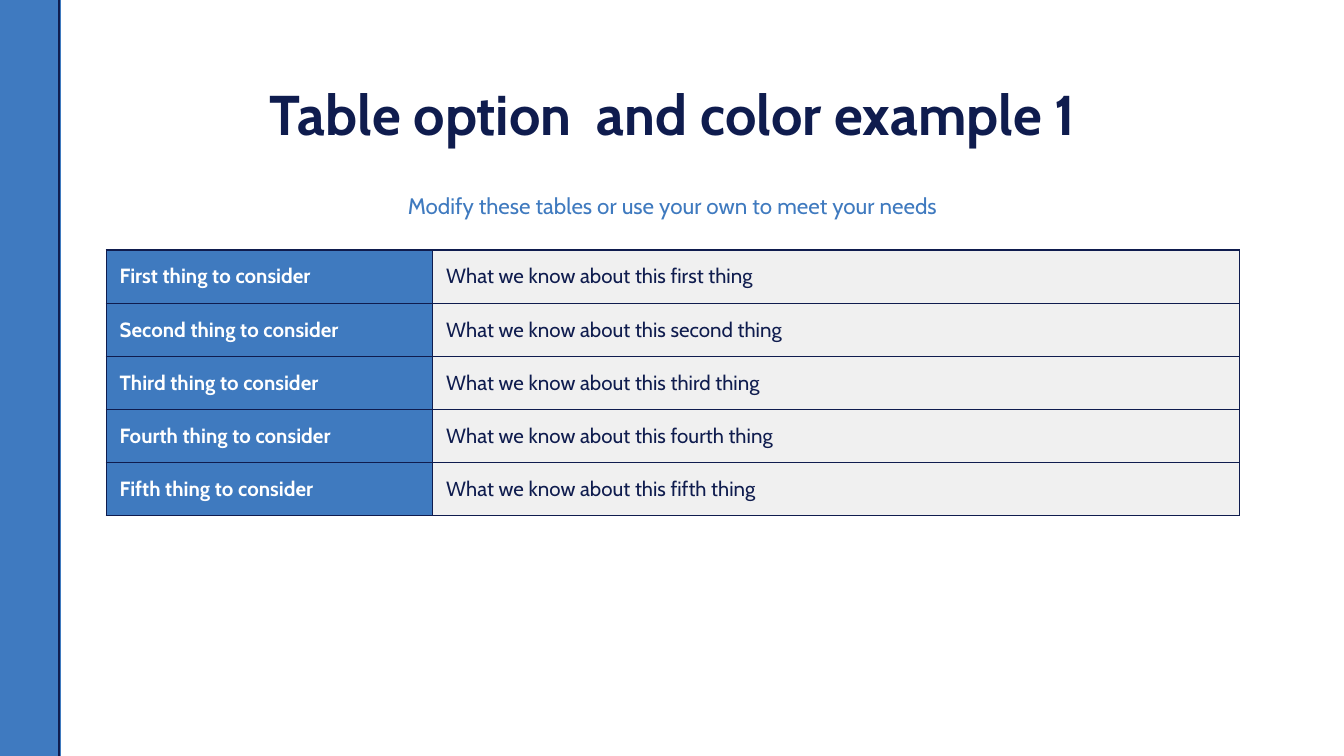
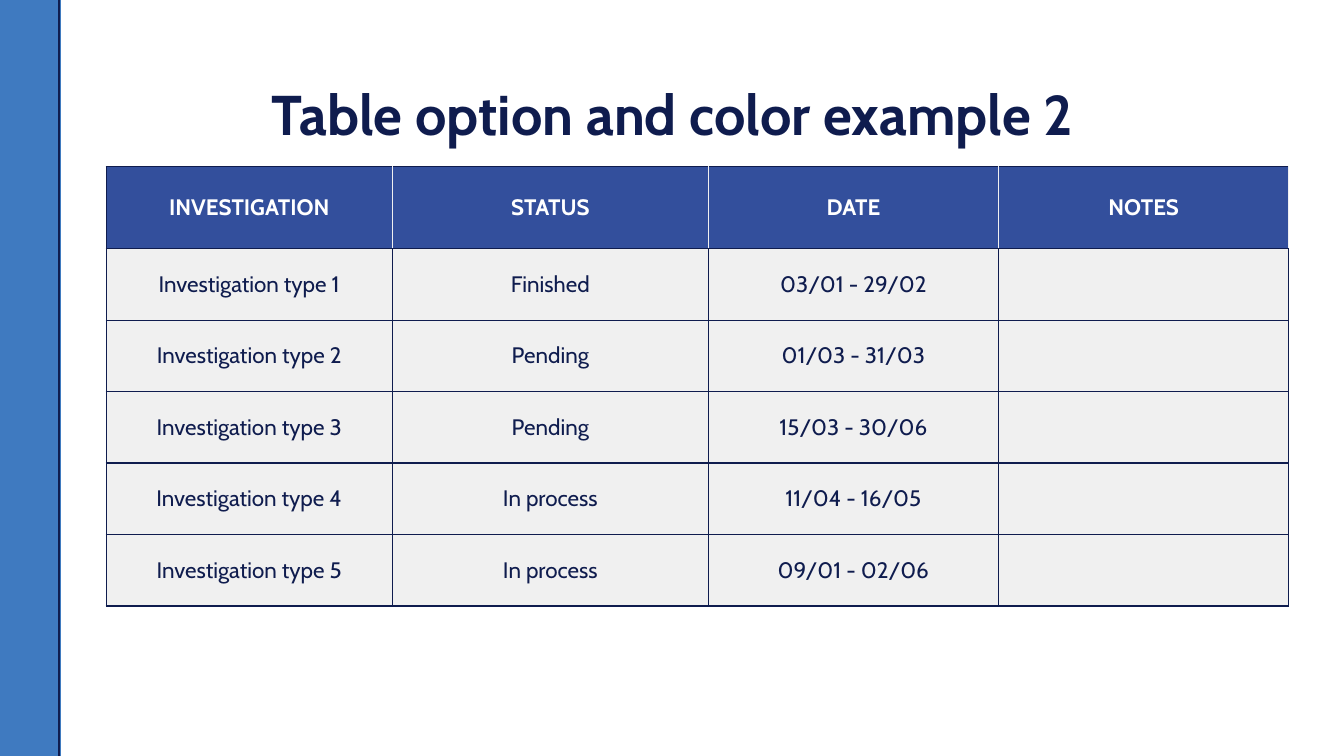
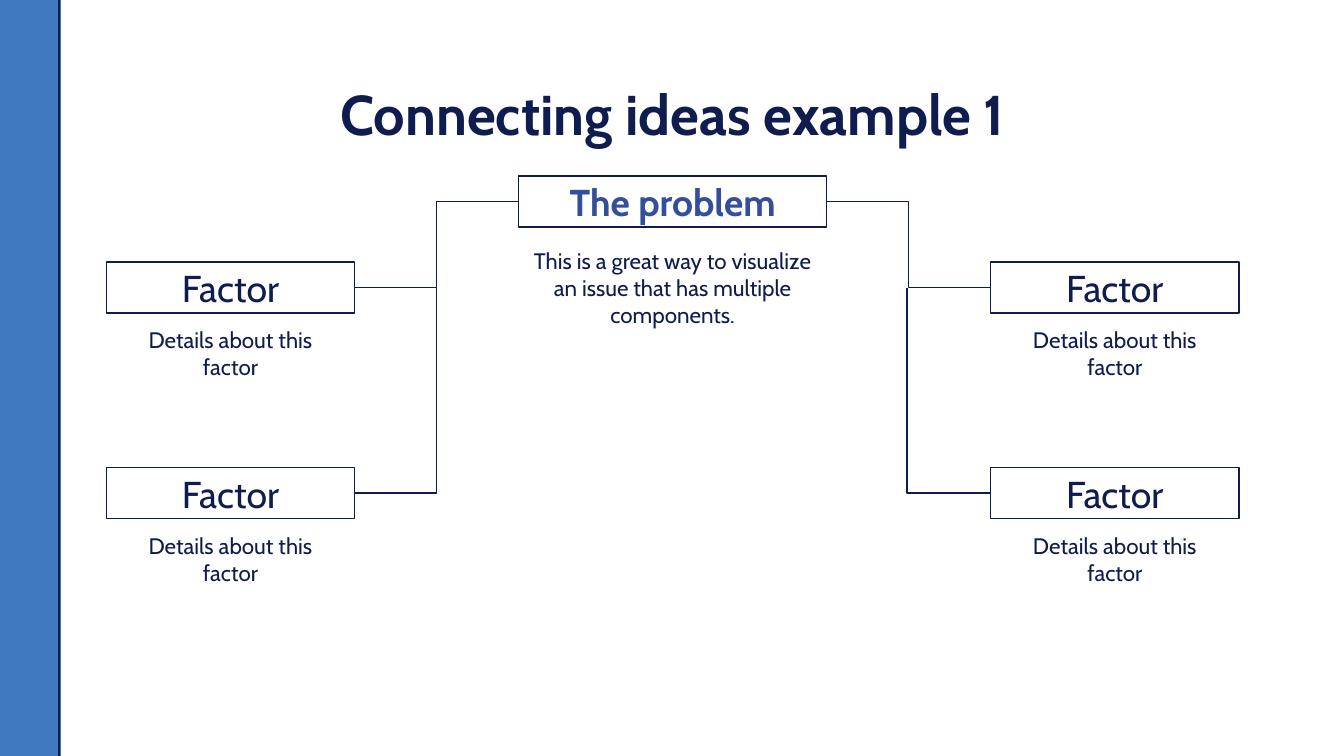
from dataclasses import dataclass

from lxml import etree
from pptx import Presentation
from pptx.dml.color import RGBColor
from pptx.enum.shapes import MSO_CONNECTOR, MSO_SHAPE
from pptx.enum.text import MSO_ANCHOR, PP_ALIGN
from pptx.oxml.ns import qn
from pptx.util import Inches, Pt

RECTANGLE = MSO_SHAPE.RECTANGLE
STRAIGHT, ELBOW = MSO_CONNECTOR.STRAIGHT, MSO_CONNECTOR.ELBOW
LEFT, CENTER = PP_ALIGN.LEFT, PP_ALIGN.CENTER
TOP, MIDDLE = MSO_ANCHOR.TOP, MSO_ANCHOR.MIDDLE
LEFT_SITE, RIGHT_SITE = 1, 3


@dataclass(frozen=True)
class Theme:
    font: str = "Cabin"
    navy: str = "0F1C4E"
    blue: str = "3F7ABF"
    band: str = "3F7AC0"
    royal: str = "334F9C"
    gray: str = "F0F0F0"
    white: str = "FFFFFF"
    title_size: float = 30
    label_size: float = 20
    body_size: float = 12
    row_size: float = 11
    thin: float = 0.75
    inset: float = 0.1


THEME = Theme()
SLIDE_WIDTH = 10
SLIDE_HEIGHT = SLIDE_WIDTH * 9 / 16
MARGIN, CONTENT_WIDTH = 0.79, 8.43

CONSIDER = {
    "title": "Table option  and color example 1",
    "subtitle": "Modify these tables or use your own to meet your needs",
    "ordinals": ["First", "Second", "Third", "Fourth", "Fifth"],
    "columns": [2.43, 6],
    "height": 1.98,
}

INVESTIGATIONS = {
    "title": "Table option and color example 2",
    "header": ["INVESTIGATION", "STATUS", "DATE", "NOTES"],
    "rows": [
        ("Finished", "03/01 - 29/02"),
        ("Pending", "01/03 - 31/03"),
        ("Pending", "15/03 - 30/06"),
        ("In process", "11/04 - 16/05"),
        ("In process", "09/01 - 02/06"),
    ],
    "columns": [2.13, 2.35, 2.16, 2.16],
    "header_height": 0.61,
    "height": 3.27,
}

IDEAS = {
    "title": "Connecting ideas example 1",
    "problem": "The problem",
    "summary": "This is a great way to visualize an issue that has multiple components.",
    "factor": "Factor",
    "details": "Details about this factor",
}
LABEL_HEIGHT = 0.38
PROBLEM_LEFT, PROBLEM_TOP, PROBLEM_WIDTH = 3.86, 1.31, 2.29
FACTOR_WIDTH = 1.85
FACTOR_TOPS = [1.95, 3.48]
FACTOR_SIDES = [
    {"left": MARGIN, "spine": 3.25, "factor_site": RIGHT_SITE, "problem_site": LEFT_SITE},
    {
        "left": MARGIN + CONTENT_WIDTH - FACTOR_WIDTH,
        "spine": 6.75,
        "factor_site": LEFT_SITE,
        "problem_site": RIGHT_SITE,
    },
]


def rgb(color):
    return RGBColor.from_string(color)


def inches(*lengths):
    return [Inches(length) for length in lengths]


def write(frame, text, size, color, bold=False, align=CENTER):
    para = frame.paragraphs[0]
    para.alignment = align
    if not text:
        para.font.size = Pt(size)
        return
    span = para.add_run()
    span.text = text
    span.font.name = THEME.font
    span.font.size = Pt(size)
    span.font.bold = bold
    span.font.color.rgb = rgb(color)


def fill_frame(frame, anchor, *text_style):
    frame.word_wrap = True
    frame.vertical_anchor = anchor
    frame.margin_left = frame.margin_right = Inches(THEME.inset)
    frame.margin_top = frame.margin_bottom = Inches(THEME.inset)
    write(frame, *text_style)


def add_text(page, area, text, size=THEME.body_size, color=THEME.navy, bold=False):
    box = page.shapes.add_textbox(*inches(*area))
    fill_frame(box.text_frame, TOP, text, size, color, bold)


def add_label(page, area, text, color=THEME.navy, bold=False):
    box = page.shapes.add_shape(RECTANGLE, *inches(*area))
    box.shadow.inherit = False
    box.fill.background()
    box.line.color.rgb = rgb(THEME.navy)
    box.line.width = Pt(THEME.thin)
    fill_frame(box.text_frame, MIDDLE, text, THEME.label_size, color, bold)
    return box


def add_line(page, kind, start, end, color=THEME.navy, width=THEME.thin):
    line = page.shapes.add_connector(kind, *inches(*start, *end))
    line.line.color.rgb = rgb(color)
    line.line.width = Pt(width)
    etree.SubElement(line._element.spPr, qn("a:effectLst"))
    return line


def add_page(deck, title):
    page = deck.slides.add_slide(deck.slide_layouts[6])
    page.background.fill.solid()
    page.background.fill.fore_color.rgb = rgb(THEME.white)
    band = page.shapes.add_shape(RECTANGLE, *inches(-0.01, -0.01, 0.45, 5.64))
    band.shadow.inherit = False
    band.fill.solid()
    band.fill.fore_color.rgb = rgb(THEME.band)
    band.line.fill.background()
    for x, color, width in [(0.45, THEME.blue, THEME.thin), (0.44, THEME.navy, 1)]:
        add_line(page, STRAIGHT, (x, 5.63), (x, -0.01), color, width)
    add_text(page, (MARGIN, 0.49, CONTENT_WIDTH, 0.63), title, THEME.title_size, bold=True)
    return page


def set_borders(cell, left=THEME.navy, right=THEME.navy):
    properties = cell._tc.get_or_add_tcPr()
    sides = [("L", left), ("R", right), ("T", THEME.navy), ("B", THEME.navy)]
    for position, (side, color) in enumerate(sides):
        border = etree.Element(qn(f"a:ln{side}"), w=str(Pt(THEME.thin)))
        fill = etree.SubElement(border, qn("a:solidFill"))
        etree.SubElement(fill, qn("a:srgbClr"), val=color)
        properties.insert(position, border)


def add_grid(page, top, columns, heights, has_header):
    area = inches(MARGIN, top, sum(columns), sum(heights))
    table = page.shapes.add_table(len(heights), len(columns), *area).table
    table.first_row = has_header
    table.horz_banding = False
    for column, width in zip(table.columns, columns):
        column.width = Inches(width)
    for row, height in zip(table.rows, heights):
        row.height = Inches(height)
    return table


def fill_cell(cell, text, fill, size, color, bold, align, inset, **borders):
    cell.fill.solid()
    cell.fill.fore_color.rgb = rgb(fill)
    cell.vertical_anchor = MIDDLE
    cell.margin_left = cell.margin_right = Inches(THEME.inset)
    cell.margin_top = cell.margin_bottom = Inches(inset)
    write(cell.text_frame, text, size, color, bold, align)
    set_borders(cell, **borders)


def build_consider(deck):
    page = add_page(deck, CONSIDER["title"])
    subtitle_area = (MARGIN, 1.33, CONTENT_WIDTH, 0.38)
    add_text(page, subtitle_area, CONSIDER["subtitle"], color=THEME.blue)
    ordinals = CONSIDER["ordinals"]
    heights = [CONSIDER["height"] / len(ordinals)] * len(ordinals)
    table = add_grid(page, 1.86, CONSIDER["columns"], heights, False)
    for row, ordinal in enumerate(ordinals):
        cells = [
            (f"{ordinal} thing to consider", THEME.blue, THEME.white, True),
            (f"What we know about this {ordinal.lower()} thing", THEME.gray, THEME.navy, False),
        ]
        for column, (text, fill, color, bold) in enumerate(cells):
            cell = table.cell(row, column)
            fill_cell(cell, text, fill, THEME.row_size, color, bold, LEFT, 0)


def build_investigations(deck):
    page = add_page(deck, INVESTIGATIONS["title"])
    rows = [INVESTIGATIONS["header"]]
    for number, (status, dates) in enumerate(INVESTIGATIONS["rows"], 1):
        rows.append([f"Investigation type {number}", status, dates, ""])
    header_height = INVESTIGATIONS["header_height"]
    body_count = len(rows) - 1
    row_height = (INVESTIGATIONS["height"] - header_height) / body_count
    heights = [header_height] + [row_height] * body_count
    table = add_grid(page, 1.24, INVESTIGATIONS["columns"], heights, True)
    for row, texts in enumerate(rows):
        is_header = row == 0
        fill, color = (THEME.royal, THEME.white) if is_header else (THEME.gray, THEME.navy)
        for column, text in enumerate(texts):
            borders = {}
            if is_header:
                borders = {"left": THEME.gray if column else THEME.navy, "right": THEME.gray}
            fill_cell(table.cell(row, column), text, fill, THEME.body_size, color,
                      is_header, CENTER, THEME.inset, **borders)


def build_ideas(deck):
    page = add_page(deck, IDEAS["title"])
    problem_area = (PROBLEM_LEFT, PROBLEM_TOP, PROBLEM_WIDTH, LABEL_HEIGHT)
    problem = add_label(page, problem_area, IDEAS["problem"], THEME.royal, True)
    add_text(page, (PROBLEM_LEFT, 1.74, PROBLEM_WIDTH, 1.76), IDEAS["summary"])
    upper_middle, lower_middle = [top + LABEL_HEIGHT / 2 for top in FACTOR_TOPS]
    for side in FACTOR_SIDES:
        factors = []
        for top in FACTOR_TOPS:
            below = top + LABEL_HEIGHT
            add_text(page, (side["left"], below, FACTOR_WIDTH, 0.79), IDEAS["details"])
            factor_area = (side["left"], top, FACTOR_WIDTH, LABEL_HEIGHT)
            factors.append(add_label(page, factor_area, IDEAS["factor"]))
        upper, lower = factors
        spine = side["spine"]
        branch = add_line(page, ELBOW, (spine, lower_middle), (spine, upper_middle))
        branch._element.spPr.find(qn("a:prstGeom")).set("prst", "bentConnector2")
        branch.begin_connect(lower, side["factor_site"])
        link = add_line(page, ELBOW, (spine, upper_middle), (spine, PROBLEM_TOP))
        link.begin_connect(upper, side["factor_site"])
        link.end_connect(problem, side["problem_site"])


def main():
    deck = Presentation()
    deck.slide_width, deck.slide_height = inches(SLIDE_WIDTH, SLIDE_HEIGHT)
    build_consider(deck)
    build_investigations(deck)
    build_ideas(deck)
    deck.save("out.pptx")


if __name__ == "__main__":
    main()
